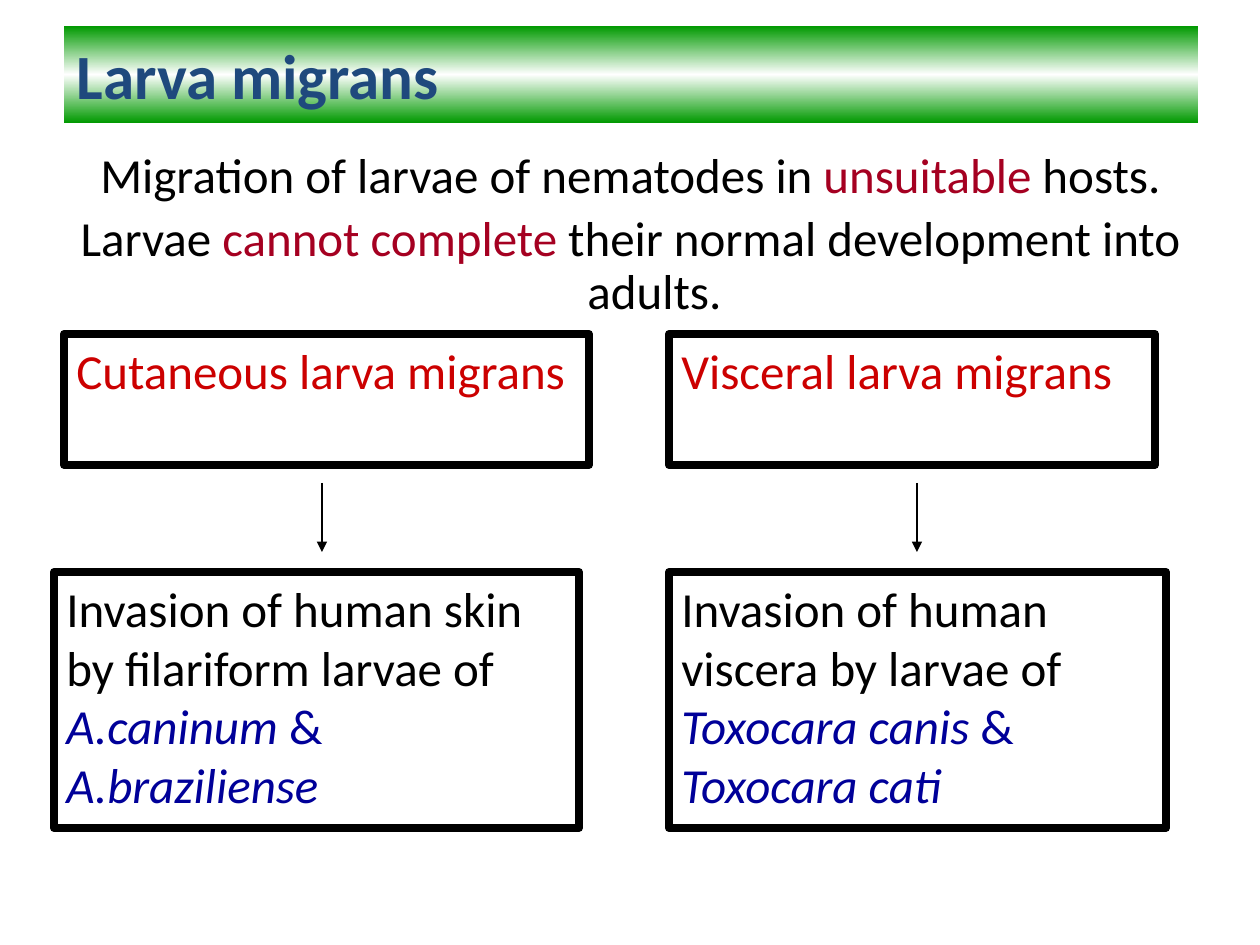
from lxml.etree import SubElement
from pptx import Presentation
from pptx.dml.color import RGBColor
from pptx.enum.shapes import MSO_CONNECTOR, MSO_SHAPE
from pptx.enum.text import MSO_ANCHOR, PP_ALIGN
from pptx.oxml import parse_xml
from pptx.oxml.ns import nsdecls, qn
from pptx.util import Emu, Pt

PX = 914400 // 126
FONT = "Calibri"
BLACK = RGBColor(0x00, 0x00, 0x00)
WHITE = RGBColor(0xFF, 0xFF, 0xFF)
GREEN = RGBColor(0x00, 0x99, 0x00)
TITLE_BLUE = RGBColor(0x1F, 0x49, 0x7D)
NAVY = RGBColor(0x00, 0x00, 0x99)
CRIMSON = RGBColor(0xA5, 0x00, 0x21)
RED = RGBColor(0xCC, 0x00, 0x00)

TITLE = "Larva migrans"
INTRO = [
    [("Migration of larvae of nematodes in ", BLACK, False),
     ("unsuitable", CRIMSON, False), (" hosts.", BLACK, False)],
    [("Larvae ", BLACK, False), ("cannot complete", CRIMSON, False),
     (" their normal development into adults.", BLACK, False)],
]
BRANCHES = [
    {"name": "Cutaneous larva migrans", "name_box": (64, 525),
     "cause": "Invasion of human skin by filariform larvae of ",
     "species": ("A.caninum ", "A.braziliense"),
     "cause_box": (54, 525), "arrow_x": 322},
    {"name": "Visceral larva migrans", "name_box": (669, 486),
     "cause": "Invasion of human viscera by larvae of ",
     "species": ("Toxocara canis ", "Toxocara cati"),
     "cause_box": (669, 497), "arrow_x": 917},
]
NAME_ROW = (334, 131)
ARROW_ROW = (483, 552)
CAUSE_ROW = (572, 256)


def px(*values):
    return [Emu(v * PX) for v in values]


def add_runs(p, runs):
    for text, color, italic in runs:
        r = p.add_run()
        r.text = text
        r.font.name = FONT
        r.font.size = Pt(28)
        r.font.color.rgb = color
        r.font.italic = italic


def add_title(slide):
    sp = slide.shapes.title
    sp.left, sp.top, sp.width, sp.height = px(64, 26, 1134, 97)
    stops = "".join(
        f'<a:gs pos="{pos * 1000}"><a:srgbClr val="{color}"/></a:gs>'
        for pos, color in ((0, GREEN), (50, WHITE), (100, GREEN)))
    sp._element.spPr.append(parse_xml(
        f'<a:gradFill {nsdecls("a")} rotWithShape="1"><a:gsLst>{stops}</a:gsLst>'
        '<a:lin ang="5400000" scaled="1"/></a:gradFill>'))
    tf = sp.text_frame
    tf.text = TITLE
    tf.vertical_anchor = MSO_ANCHOR.MIDDLE
    p = tf.paragraphs[0]
    p.alignment = PP_ALIGN.LEFT
    font = p.runs[0].font
    font.name, font.size, font.bold = FONT, Pt(36), True
    font.color.rgb = TITLE_BLUE


def add_intro(slide):
    tf = slide.shapes.add_textbox(*px(25, 145, 1211, 169)).text_frame
    tf.word_wrap = True
    for i, runs in enumerate(INTRO):
        p = tf.add_paragraph() if i else tf.paragraphs[0]
        p.alignment = PP_ALIGN.CENTER
        p.line_spacing = 0.9
        p.space_before = Pt(5.6)
        pPr = p._p.get_or_add_pPr()
        pPr.set("marL", str(48 * PX))
        pPr.set("indent", str(-48 * PX))
        add_runs(p, runs)


def add_box(slide, span, row, runs):
    (left, width), (top, height) = span, row
    sp = slide.shapes.add_shape(MSO_SHAPE.RECTANGLE, *px(left, top, width, height))
    sp.shadow.inherit = False
    sp.fill.background()
    sp.line.color.rgb = BLACK
    sp.line.width = Pt(4.5)
    tf = sp.text_frame
    tf.word_wrap = True
    tf.vertical_anchor = MSO_ANCHOR.TOP
    p = tf.paragraphs[0]
    p.alignment = PP_ALIGN.LEFT
    add_runs(p, runs)


def add_arrow(slide, x):
    top, bottom = ARROW_ROW
    line = slide.shapes.add_connector(MSO_CONNECTOR.STRAIGHT, *px(x, top, x, bottom))
    line.line.color.rgb = BLACK
    line.line.width = Pt(0.75)
    SubElement(line.line._get_or_add_ln(), qn("a:tailEnd"), type="triangle")
    SubElement(line._element.spPr, qn("a:effectLst"))


def main():
    prs = Presentation()
    prs.slide_width, prs.slide_height = px(1260, 945)
    slide = prs.slides.add_slide(prs.slide_layouts[5])
    add_title(slide)
    add_intro(slide)
    for branch in BRANCHES:
        first, second = branch["species"]
        add_box(slide, branch["name_box"], NAME_ROW, [(branch["name"], RED, False)])
        add_arrow(slide, branch["arrow_x"])
        add_box(slide, branch["cause_box"], CAUSE_ROW, [
            (branch["cause"], BLACK, False), (first, NAVY, True),
            ("& ", NAVY, False), (second, NAVY, True)])
    prs.save("out.pptx")


if __name__ == "__main__":
    main()
